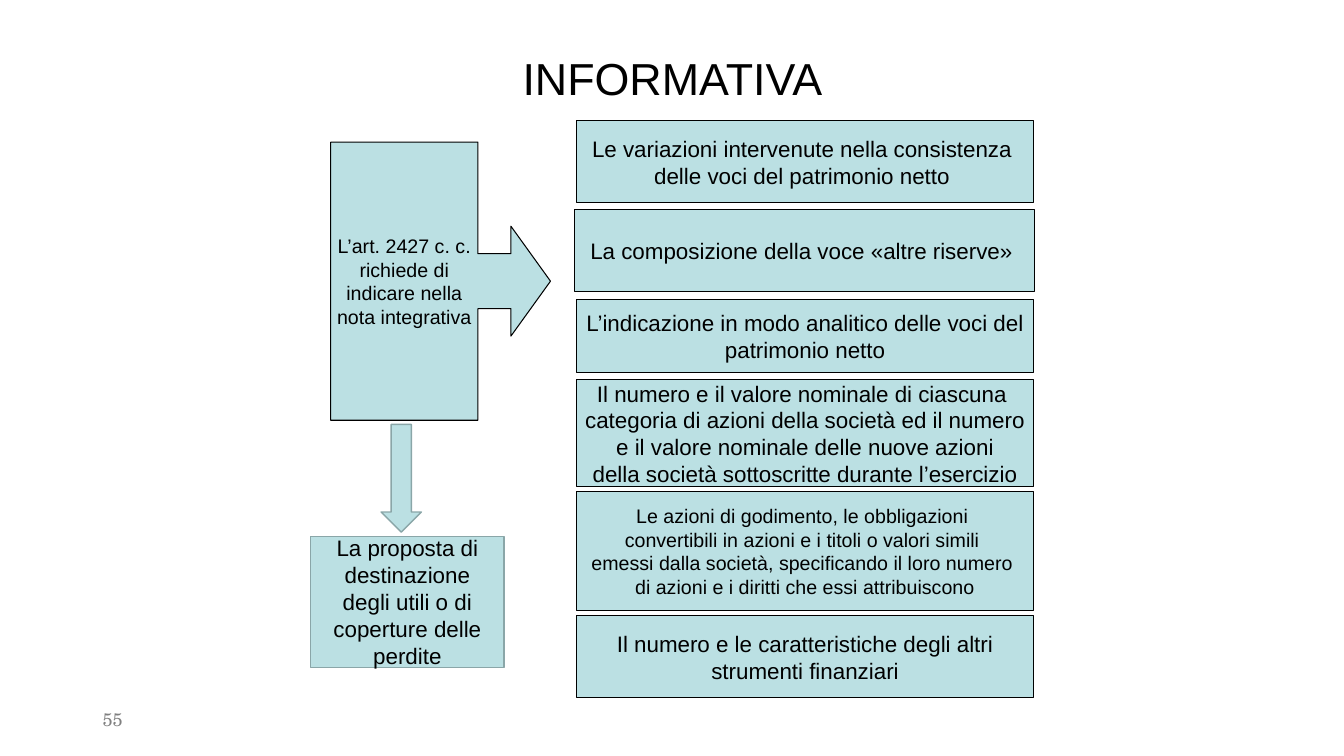
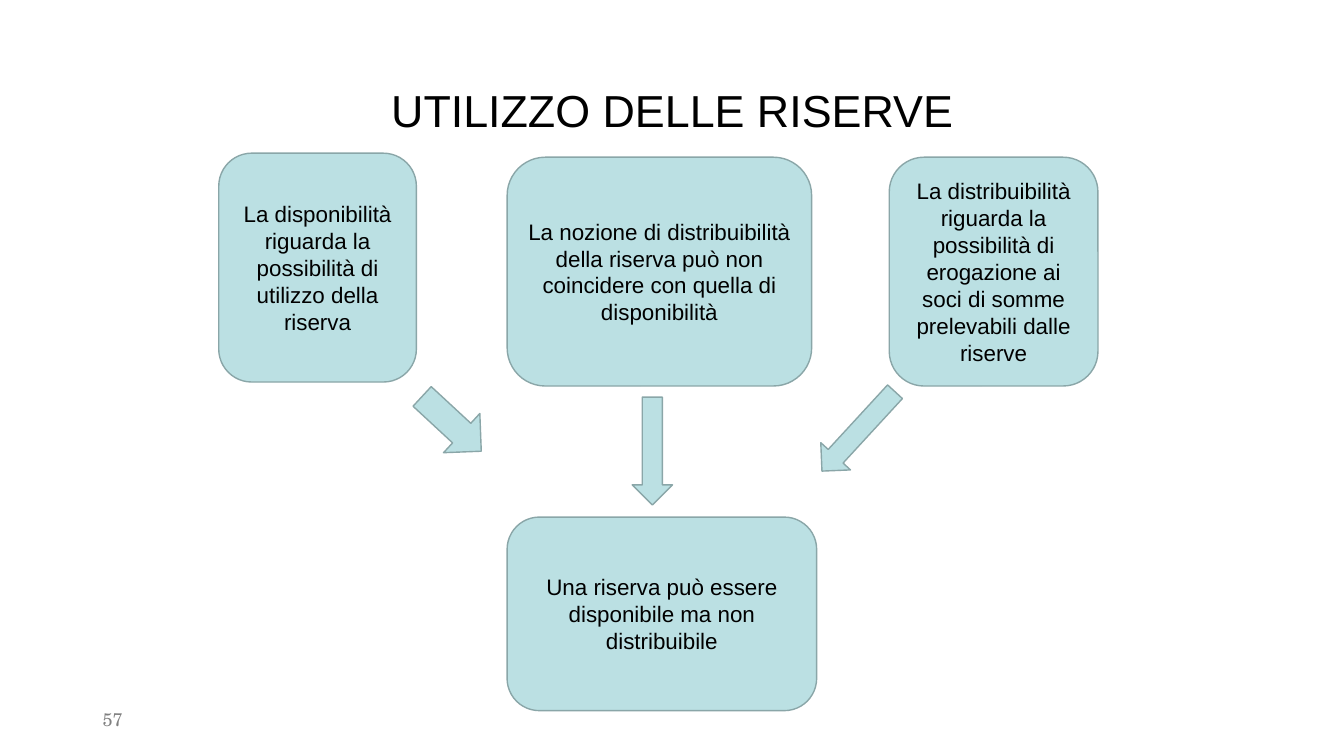
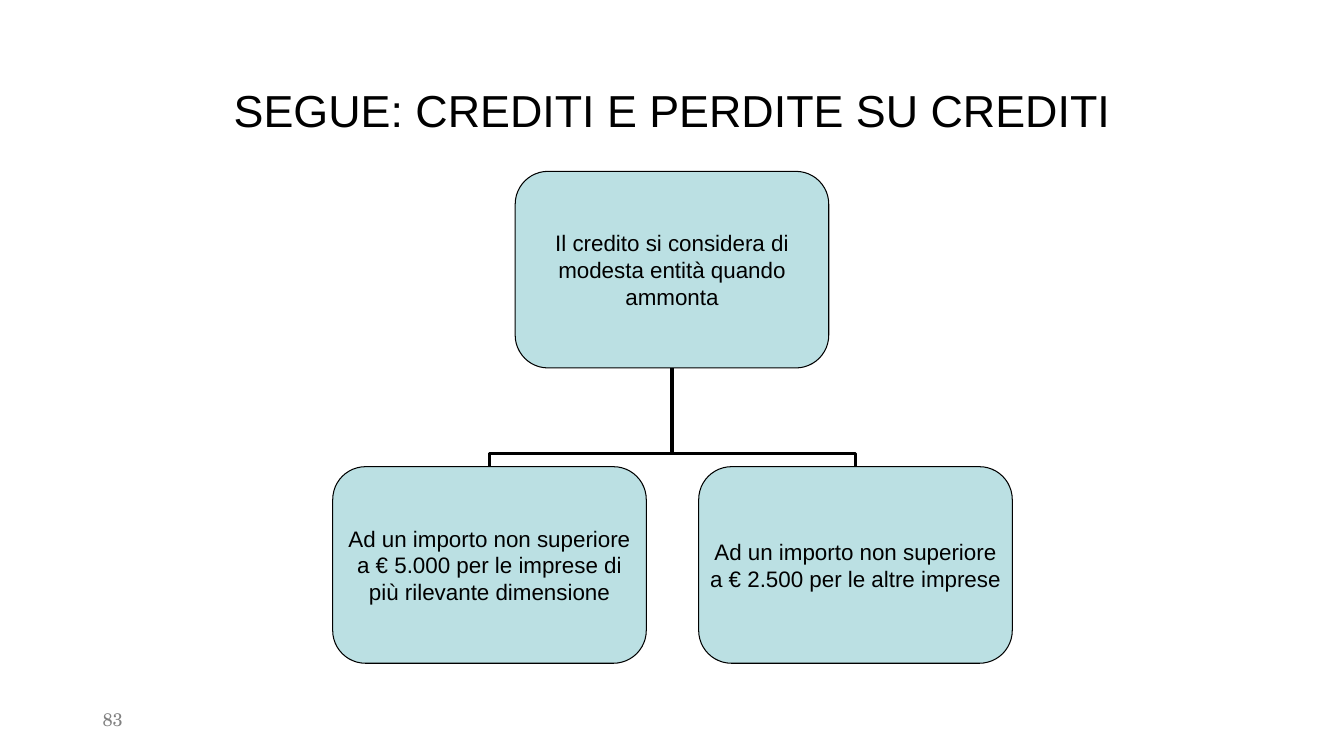
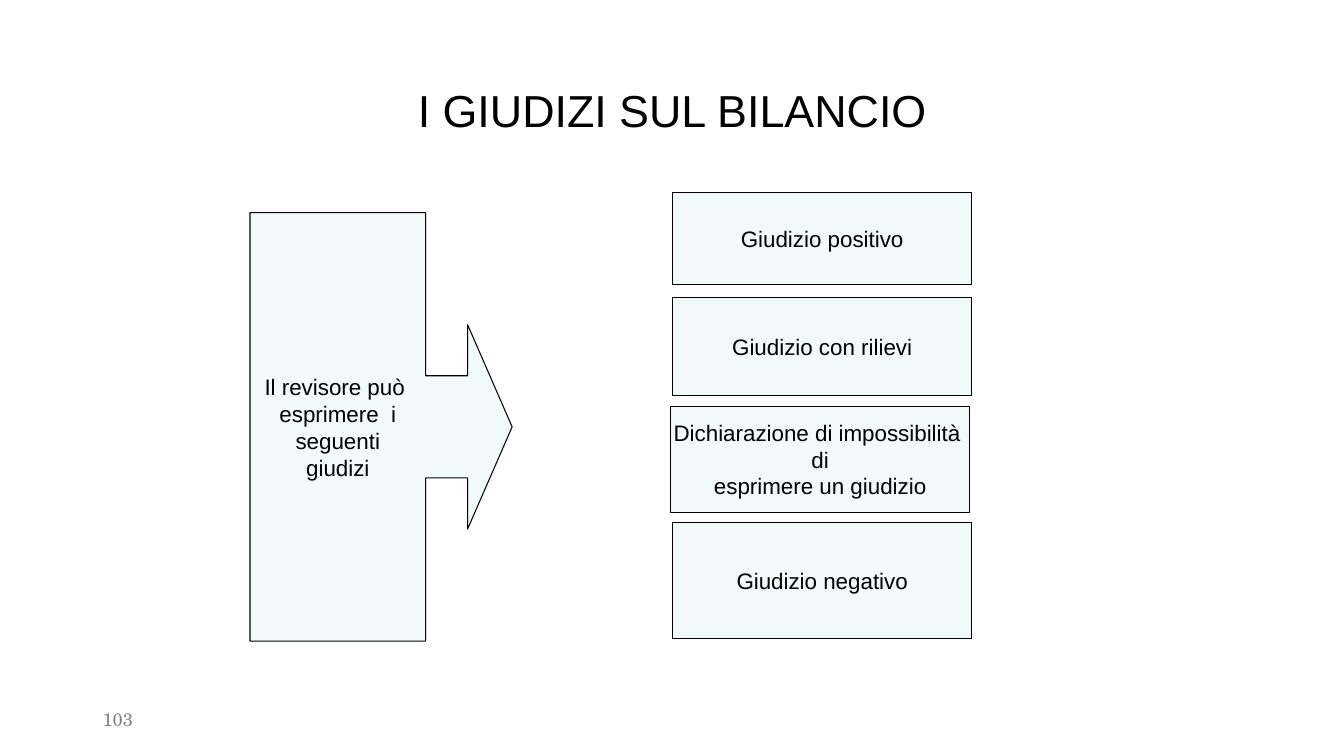
from lxml import etree
from pptx import Presentation
from pptx.dml.color import RGBColor
from pptx.enum import shapes, text
from pptx.oxml.ns import qn
from pptx.util import Inches, Pt

COLORS = {
    "ink": "000000",
    "page_number": "808080",
    "aqua": "BBE0E3",
    "aqua_edge": "8AA6A8",
    "pale": "F1F9F9",
}
BODY_FONT = "Arial"
NUMBER_FONT = "TeX Gyre Schola"
THIN, MEDIUM, THICK = 0.75, 1, 2.25

KIND = shapes.MSO_SHAPE
ALIGN = text.PP_ALIGN


def color(name):
    return RGBColor.from_string(COLORS[name])


def write(shape, words, size, ink="ink", font=BODY_FONT, align=ALIGN.CENTER,
          wrap=True, spacing=None):
    """Fill a shape with one paragraph per line of words."""
    frame = shape.text_frame
    frame.word_wrap = wrap
    frame.vertical_anchor = text.MSO_ANCHOR.MIDDLE
    frame.text = words
    for paragraph in frame.paragraphs:
        paragraph.alignment = align
        paragraph.line_spacing = spacing
        paragraph.font.size = Pt(size)
        paragraph.font.name = font
        paragraph.font.color.rgb = color(ink)


def add_label(slide, box, words, size, **style):
    label = slide.shapes.add_textbox(*map(Inches, box))
    write(label, words, size, **style)


def add_page(deck, title, number, title_top=0.4):
    slide = deck.slides.add_slide(deck.slide_layouts[6])
    add_label(slide, (0.92, title_top, 11.5, 1.45), title, 32, spacing=0.9)
    add_label(slide, (0.92, 6.95, 3, 0.4), number, 13, ink="page_number",
              font=NUMBER_FONT, align=ALIGN.LEFT, spacing=0.93)
    return slide


def add_figure(slide, kind, box, fill="aqua", edge="aqua_edge", weight=MEDIUM,
               rotation=0, adjustments=()):
    figure = slide.shapes.add_shape(kind, *map(Inches, box))
    figure.shadow.inherit = False
    figure.fill.solid()
    figure.fill.fore_color.rgb = color(fill)
    figure.line.color.rgb = color(edge)
    figure.line.width = Pt(weight)
    figure.rotation = rotation
    for index, value in enumerate(adjustments):
        figure.adjustments[index] = value
    return figure


def add_outlined(slide, kind, box, words, size=16, fill="aqua", adjustments=()):
    """Add a black-edged figure whose lines break only where written."""
    figure = add_figure(slide, kind, box, fill, "ink", THIN,
                        adjustments=adjustments)
    write(figure, words, size, wrap=False)
    return figure


def add_wrapped(slide, kind, box, words):
    write(add_figure(slide, kind, box), words, 16)


def add_branch(slide, parent, child, bend=0.13):
    """Draw an elbow from the top of child up to the bottom of parent."""
    start_x, start_y = child.left + child.width // 2, child.top
    end_x, end_y = parent.left + parent.width // 2, parent.top + parent.height
    rise, spread = start_y - end_y, abs(end_x - start_x)
    left = (start_x + end_x - rise) // 2
    top = (start_y + end_y - spread) // 2
    sides, turn = (left, left + rise), 270
    if start_x > end_x:
        sides, turn = sides[::-1], 90
    branch = slide.shapes.add_connector(
        shapes.MSO_CONNECTOR.ELBOW, sides[0], top, sides[1], top + spread)
    branch.line.color.rgb = color("ink")
    branch.line.width = Pt(THICK)
    properties = branch._element.spPr
    properties.find(qn("a:xfrm")).set("rot", str(turn * 60000))
    guides = properties.find(qn("a:prstGeom")).get_or_add_avLst()
    etree.SubElement(guides, qn("a:gd"), name="adj1",
                     fmla=f"val {round(bend * 100000)}")
    etree.SubElement(properties, qn("a:effectLst"))


def add_disclosures(deck):
    slide = add_page(deck, "INFORMATIVA", "55", title_top=0.08)
    add_outlined(
        slide, KIND.RIGHT_ARROW_CALLOUT, (3.28, 1.41, 2.18, 2.76),
        "L’art. 2427 c. c.\nrichiede di\nindicare nella\nnota integrativa",
        size=14, adjustments=(0.25, 0.25, 0.18, 0.67))
    add_figure(slide, KIND.DOWN_ARROW, (3.78, 4.21, 0.4, 1.07))
    add_wrapped(slide, KIND.RECTANGLE, (3.08, 5.32, 1.92, 1.3),
                "La proposta di destinazione degli utili o di coperture delle perdite")
    disclosures = [
        ((5.72, 1.2, 4.53, 0.81), 16,
         "Le variazioni intervenute nella consistenza \n"
         "delle voci del patrimonio netto "),
        ((5.7, 2.08, 4.56, 0.81), 16,
         "La composizione della voce «altre riserve» "),
        ((5.72, 2.97, 4.53, 0.73), 16,
         "L’indicazione in modo analitico delle voci del\npatrimonio netto"),
        ((5.72, 3.77, 4.53, 1.06), 16,
         "Il numero e il valore nominale di ciascuna \n"
         "categoria di azioni della società ed il numero\n"
         " e il valore nominale delle nuove azioni \n"
         "della società sottoscritte durante l’esercizio"),
        ((5.72, 4.88, 4.53, 1.18), 14,
         "Le azioni di godimento, le obbligazioni \n"
         "convertibili in azioni e i titoli o valori simili \n"
         "emessi dalla società, specificando il loro numero \n"
         "di azioni e i diritti che essi attribuiscono"),
        ((5.72, 6.11, 4.53, 0.81), 16,
         "Il numero e le caratteristiche degli altri\nstrumenti finanziari"),
    ]
    for box, size, words in disclosures:
        add_outlined(slide, KIND.RECTANGLE, box, words, size)


def add_reserves(deck):
    slide = add_page(deck, "UTILIZZO DELLE RISERVE", "57")
    notions = [
        ((2.17, 1.52, 1.96, 2.27),
         "La disponibilità riguarda la possibilità di utilizzo della riserva"),
        ((5.03, 1.56, 3.02, 2.27),
         "La nozione di distribuibilità della riserva può non coincidere "
         "con quella di disponibilità"),
        ((8.82, 1.56, 2.07, 2.27),
         "La distribuibilità riguarda la possibilità di erogazione ai soci "
         "di somme prelevabili dalle riserve"),
        ((5.03, 5.13, 3.07, 1.92),
         "Una riserva può essere disponibile ma non distribuibile"),
    ]
    for box, words in notions:
        add_wrapped(slide, KIND.ROUNDED_RECTANGLE, box, words)
    arrows = [
        (KIND.RIGHT_ARROW, (4.08, 3.94, 0.8, 0.53), 42.8),
        (KIND.DOWN_ARROW, (6.27, 3.94, 0.4, 1.07), 0),
        (KIND.LEFT_ARROW, (7.98, 4.08, 1.07, 0.4), 312.6),
    ]
    for kind, box, rotation in arrows:
        add_figure(slide, kind, box, rotation=rotation)


def add_credits(deck):
    slide = add_page(deck, "SEGUE: CREDITI E PERDITE SU CREDITI", "83")
    places = [
        (5.11, 1.7, "Il credito si considera di\nmodesta entità quando\nammonta"),
        (3.3, 4.63, "Ad un importo non superiore\na € 5.000 per le imprese di\n"
                    "più rilevante dimensione"),
        (6.93, 4.63, "Ad un importo non superiore\na € 2.500 per le altre imprese"),
    ]
    threshold, *limits = [
        add_outlined(slide, KIND.ROUNDED_RECTANGLE, (left, top, 3.11, 1.95), words)
        for left, top, words in places]
    for limit in limits:
        add_branch(slide, threshold, limit)


def add_opinions(deck):
    slide = add_page(deck, "I GIUDIZI SUL BILANCIO", "103")
    add_outlined(
        slide, KIND.RIGHT_ARROW_CALLOUT, (2.48, 2.11, 2.6, 4.25),
        "Il revisore può \nesprimere  i\nseguenti\ngiudizi",
        fill="pale", adjustments=(0.39, 0.39, 0.17, 0.67))
    opinions = [
        (6.67, 1.91, 0.91, "Giudizio positivo"),
        (6.67, 2.95, 0.97, "Giudizio con rilievi"),
        (6.65, 4.03, 1.05,
         "Dichiarazione di impossibilità \ndi\nesprimere un giudizio"),
        (6.67, 5.18, 1.16, "Giudizio negativo"),
    ]
    for left, top, height, words in opinions:
        add_outlined(slide, KIND.RECTANGLE, (left, top, 2.97, height), words,
                     fill="pale")


def main():
    deck = Presentation()
    deck.slide_width, deck.slide_height = Inches(13.33), Inches(7.5)
    add_disclosures(deck)
    add_reserves(deck)
    add_credits(deck)
    add_opinions(deck)
    deck.save("out.pptx")


if __name__ == "__main__":
    main()
